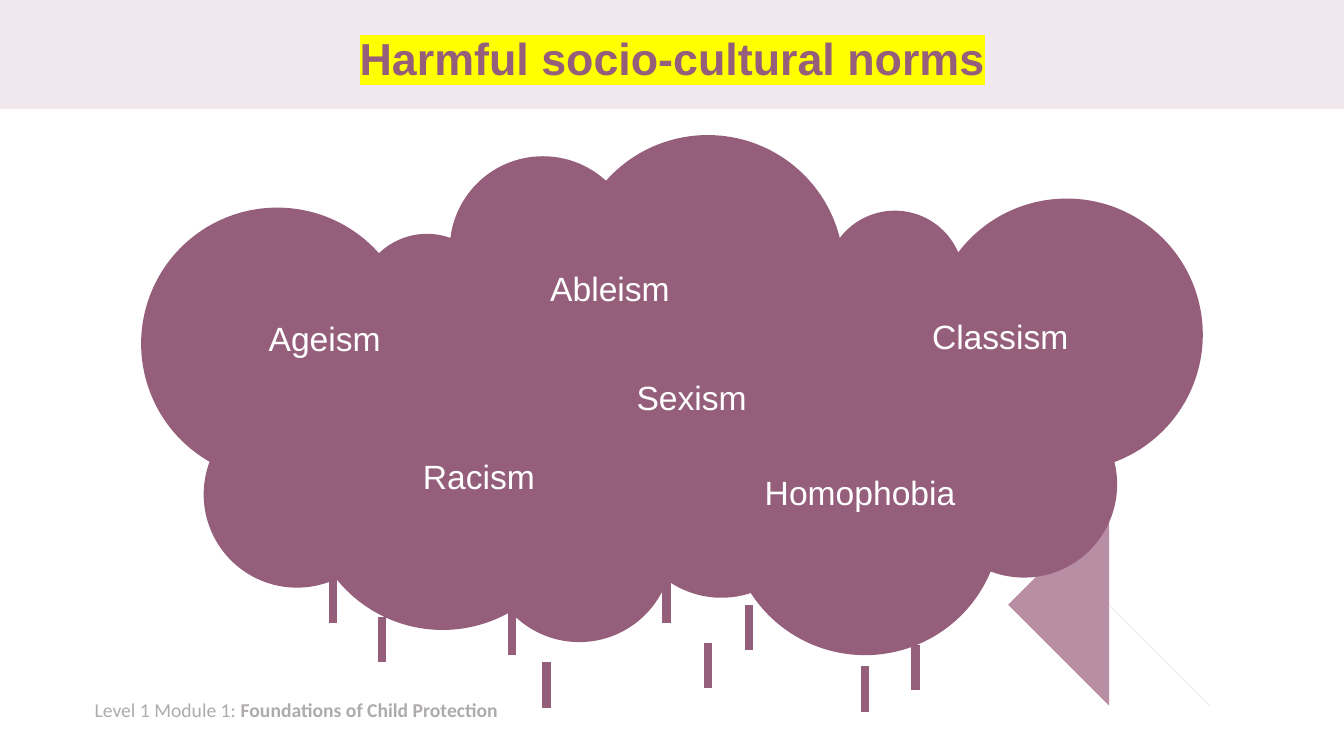
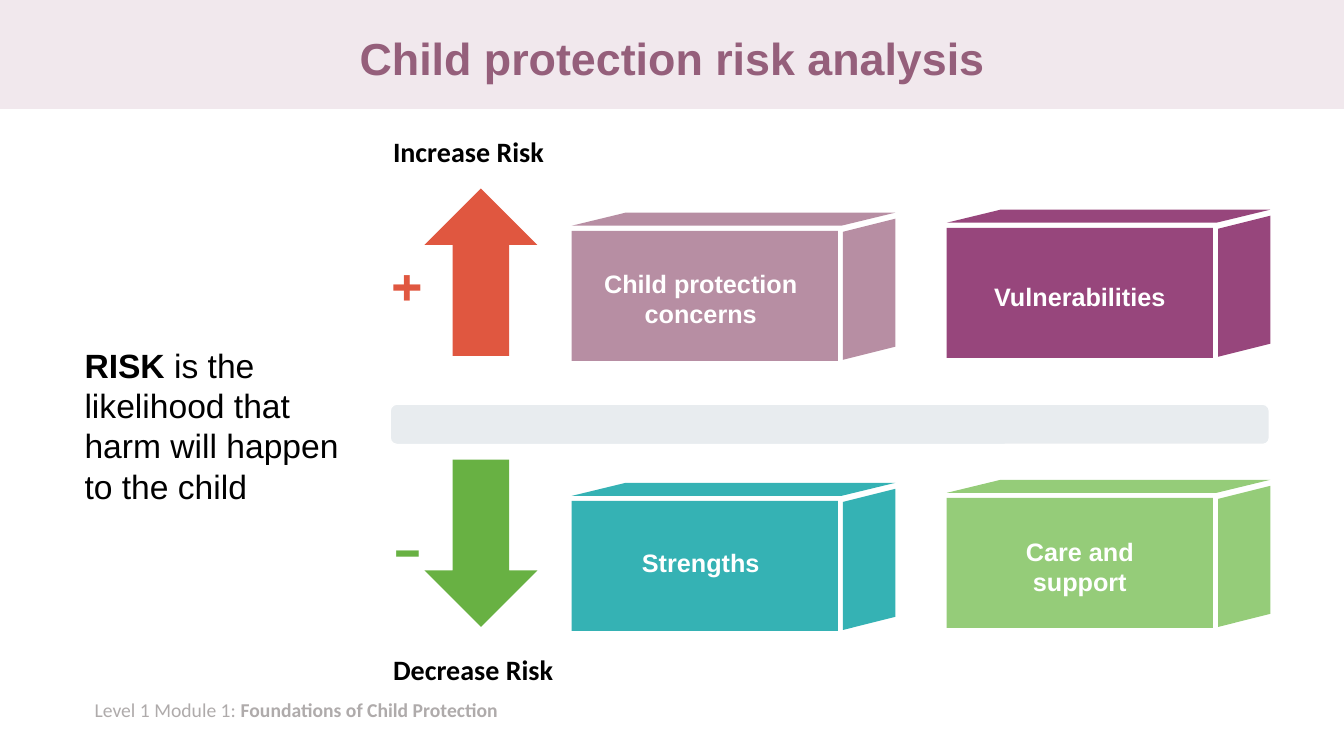
from lxml.etree import SubElement
from pptx import Presentation
from pptx.dml.color import RGBColor
from pptx.enum.shapes import MSO_CONNECTOR as Connector, MSO_SHAPE as Shape
from pptx.enum.text import MSO_ANCHOR as Anchor, PP_ALIGN as Align
from pptx.oxml import parse_xml
from pptx.oxml.ns import nsdecls, qn
from pptx.util import Inches, Pt

COLORS = {
    "band": "F1E8ED", "plum": "955F7B", "mauve": "B78EA3", "purple": "97467C",
    "red": "E05740", "green": "68B143", "light_green": "95CC79", "teal": "35B2B4",
    "bar": "E8ECEF", "footer": "AFABAB", "highlight": "FFFF00",
    "white": "FFFFFF", "black": "000000",
}
CIRCLES = {
    2.7: [(4.27, 0), (0, 0.72), (1.64, 2.21), (5.83, 2.46),
          (3.38, 1.19), (7.83, 0.63), (5.71, 1.17), (2.21, 1.41)],
    1.85: [(3.06, 0.21), (3.42, 3.18), (4.83, 2.74),
           (2.38, 2.25), (7.83, 2.54), (0.62, 2.64)],
    1.37: [(2.15, 0.98), (6.79, 0.75)],
}
RAIN = [(1.9, 4.39), (7.68, 5.06), (3.68, 4.71), (5.21, 4.39), (5.62, 5.04),
        (6.03, 4.66), (4.02, 5.23), (7.18, 5.27), (2.39, 4.78)]
BOLT = [(8.92, 4.19), (9.39, 3.74), (9.64, 4.54), (9.99, 4.2),
        (10.34, 5.46), (9.78, 4.85), (9.45, 5.17)]
NORMS = [("Ageism", 1.82, 2.01), ("Racism", 3.35, 3.38), ("Ableism", 4.65, 1.52),
         ("Homophobia", 7.13, 3.54), ("Classism", 8.52, 1.99), ("Sexism", 5.46, 2.6)]


def rgb(name):
    """Return the named colour."""
    return RGBColor.from_string(COLORS[name])


def paint(shape, color):
    """Give a shape a flat fill without line or shadow."""
    shape.fill.solid()
    shape.fill.fore_color.rgb = rgb(color)
    shape.line.fill.background()
    shape.shadow.inherit = False
    return shape


def add_block(shapes, kind, left, top, width, height, color):
    """Add a flat preset shape."""
    block = shapes.add_shape(kind, Inches(left), Inches(top), Inches(width), Inches(height))
    return paint(block, color)


def add_run(paragraph, text, size, color, font="Arial", bold=False):
    """Append a formatted run to a paragraph."""
    run = paragraph.add_run()
    run.text = text
    run.font.size = Pt(size)
    run.font.bold = bold
    run.font.color.rgb = rgb(color)
    run.font.name = font
    return run


def add_text(slide, box, runs, size, color, font="Arial", align=Align.LEFT, anchor=Anchor.TOP):
    """Add a wrapped text box holding one paragraph of (text, bold) runs."""
    text_box = slide.shapes.add_textbox(*map(Inches, box))
    frame = text_box.text_frame
    frame.word_wrap = True
    frame.vertical_anchor = anchor
    paragraph = frame.paragraphs[0]
    paragraph.alignment = align
    for text, bold in runs:
        add_run(paragraph, text, size, color, font, bold)
    return text_box


def add_label(slide, center_x, center_y, width, text, size, bold=False):
    """Add white text centred on a point."""
    height = 0.8
    box = (center_x - width / 2, center_y - height / 2, width, height)
    add_text(slide, box, [(text, bold)], size, "white", align=Align.CENTER, anchor=Anchor.MIDDLE)


def set_up_layout(layout, slide):
    """Place the title area, band and footer on the layout, drawing them on a slide first."""
    title = layout.placeholders[0]
    title.left, title.top, title.width, title.height = map(Inches, (0.92, 0.13, 11.5, 0.95))
    band = add_block(slide.shapes, Shape.RECTANGLE, 0, 0, 13.33, 1.08, "band")
    footer = add_text(slide, (0.84, 6.87, 11.35, 0.34),
                      [("Level 1 Module 1: ", False), ("Foundations of Child Protection", True)],
                      14, "footer", "Calibri")
    for position, shape in enumerate((band, footer), start=2):
        layout.shapes.element.insert(position, shape.element)


def set_title(slide, text, highlighted=False):
    """Fill the title placeholder."""
    frame = slide.shapes.title.text_frame
    frame.vertical_anchor = Anchor.MIDDLE
    paragraph = frame.paragraphs[0]
    paragraph.alignment = Align.CENTER
    paragraph.line_spacing = 0.9
    run = add_run(paragraph, text, 32, "plum", bold=True)
    if highlighted:
        highlight = parse_xml(f'<a:highlight {nsdecls("a")}>'
                              f'<a:srgbClr val="{COLORS["highlight"]}"/></a:highlight>')
        run.font.fill._xPr.find(qn("a:latin")).addprevious(highlight)


def add_raindrop(shapes, x, y):
    """Add a short thick vertical line."""
    drop = shapes.add_connector(Connector.STRAIGHT, Inches(x), Inches(y),
                                Inches(x), Inches(y + 0.45))
    drop.line.color.rgb = rgb("plum")
    drop.line.width = Pt(6)
    SubElement(drop.element.spPr, qn("a:effectLst"))


def add_storm_cloud(slide, left, top):
    """Draw the cloud with its rain, lightning and words."""
    shapes = slide.shapes.add_group_shape().shapes
    for x, y in RAIN:
        add_raindrop(shapes, left + x, top + y)
    points = [(left + x, top + y) for x, y in BOLT]
    builder = shapes.build_freeform(*points[0], scale=Inches(1))
    builder.add_line_segments(points[1:], close=True)
    paint(builder.convert_to_shape(), "mauve")
    for size, corners in CIRCLES.items():
        for x, y in corners:
            add_block(shapes, Shape.OVAL, left + x, top + y, size, size, "plum")
    for text, x, y in NORMS:
        add_label(slide, left + x, top + y, 2.63, text, 24)


def add_factor_box(slide, left, top, text, color, label_x, label_y):
    """Draw a three-sided box with its label centred at an offset."""
    shapes = slide.shapes.add_group_shape().shapes
    add_block(shapes, Shape.RECTANGLE, left, top + 0.18, 2.64, 1.29, color)
    side = add_block(shapes, Shape.PARALLELOGRAM, left + 2.25, top + 0.5, 1.4, 0.52, color)
    side.rotation = 270
    side.element.spPr.find(qn("a:xfrm")).set("flipH", "1")
    lid = add_block(shapes, Shape.PARALLELOGRAM, left, top, 3.21, 0.13, color)
    lid.adjustments[0] = 4.127
    add_label(slide, left + label_x, top + label_y, 2.19, text, 18, bold=True)


def add_direction(slide, left, top, kind, sign, sign_top, caption, caption_top, color):
    """Draw an arrow with its sign and caption."""
    add_block(slide.shapes, kind, left + 0.56, top, 1.12, 1.66, color)
    add_text(slide, (left, top + sign_top, 0.79, 0.98), [(sign, False)],
             52, color, "Cabin", Align.CENTER)
    add_text(slide, (left + 0.15, top + caption_top, 3.33, 0.44), [(caption, True)],
             20, "black", "Calibri")


def build_norms_slide(slide):
    """Build the slide on harmful norms."""
    set_title(slide, "Harmful socio-cultural norms", highlighted=True)
    add_storm_cloud(slide, 1.4, 1.34)


def build_risk_slide(slide):
    """Build the slide on risk analysis."""
    set_title(slide, "Child protection risk analysis")
    add_text(slide, (0.74, 3.37, 3.07, 1.72),
             [("RISK ", True), ("is the likelihood that harm will happen to the child", False)],
             24, "black")
    add_direction(slide, 3.65, 1.87, Shape.UP_ARROW, "+", 0.42, "Increase Risk", -0.58, "red")
    add_direction(slide, 3.65, 4.56, Shape.DOWN_ARROW, "-", 0.37, "Decrease Risk", 1.86, "green")
    bar = add_block(slide.shapes, Shape.ROUNDED_RECTANGLE, 3.87, 4.01, 8.72, 0.4, "bar")
    bar.line.color.rgb = rgb("white")
    bar.line.width = Pt(1)
    for factor in (
        (5.67, 2.11, "Child protection concerns", "mauve", 1.28, 0.85),
        (9.39, 2.08, "Vulnerabilities", "purple", 1.32, 0.86),
        (5.67, 4.79, "Strengths", "teal", 1.28, 0.79),
        (9.39, 4.76, "Care and support", "light_green", 1.32, 0.86),
    ):
        add_factor_box(slide, *factor)


def main():
    """Build and save the presentation."""
    presentation = Presentation()
    presentation.slide_width, presentation.slide_height = Inches(13.33), Inches(7.5)
    layout = presentation.slide_layouts[5]
    norms, risk = [presentation.slides.add_slide(layout) for _ in range(2)]
    set_up_layout(layout, norms)
    build_norms_slide(norms)
    build_risk_slide(risk)
    presentation.save("out.pptx")


if __name__ == "__main__":
    main()
